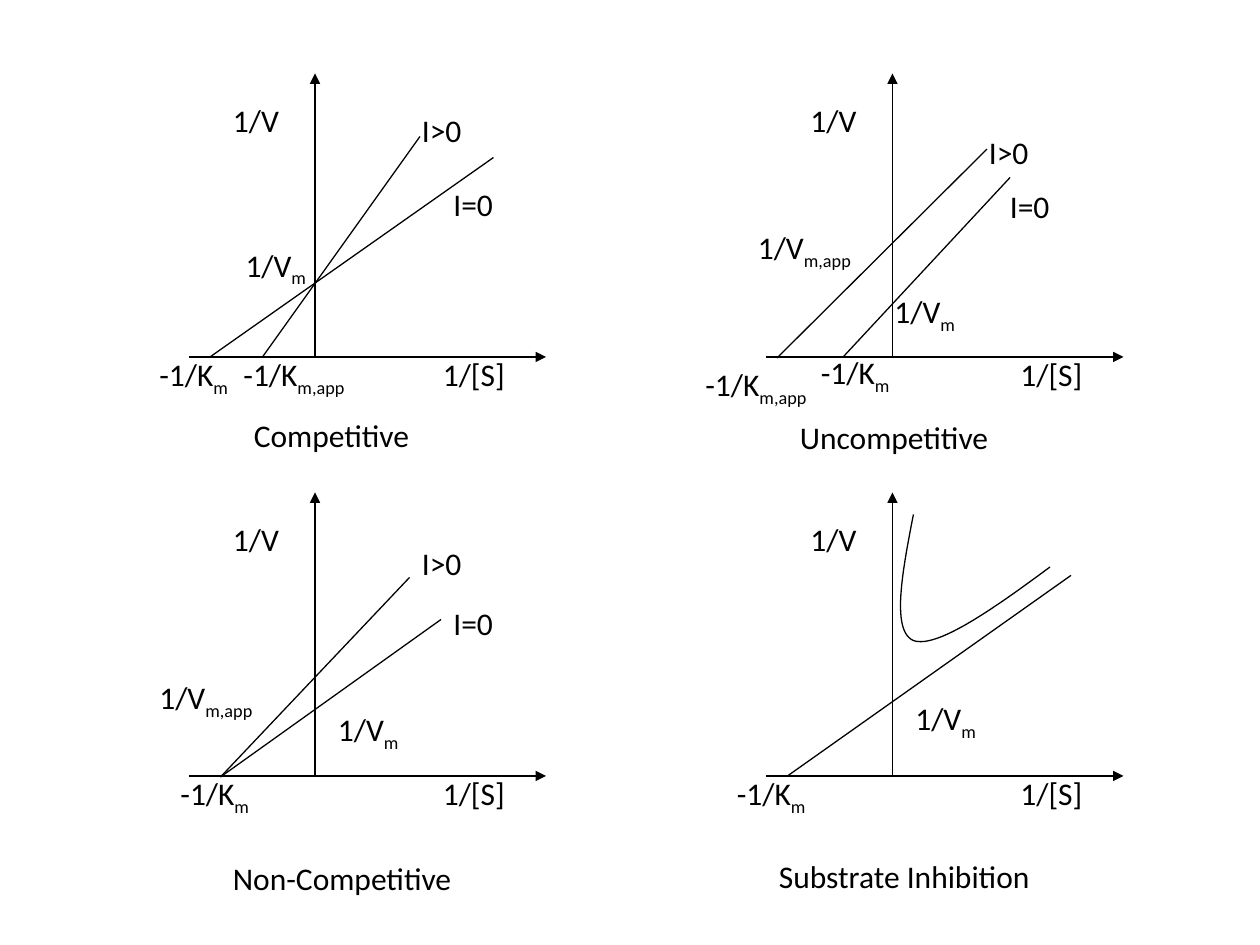
from pptx import Presentation
from pptx.dml.color import RGBColor
from pptx.enum.shapes import MSO_CONNECTOR
from pptx.enum.text import MSO_AUTO_SIZE
from pptx.oxml.ns import qn
from pptx.util import Inches, Pt
from lxml import etree

STRAIGHT = MSO_CONNECTOR.STRAIGHT
GROW = MSO_AUTO_SIZE.SHAPE_TO_FIT_TEXT
COLORS = {"ink": "000000"}
INK = RGBColor.from_string(COLORS["ink"])

deck = Presentation()
deck.slide_width, deck.slide_height = Inches(10), Inches(7.5)
slide = deck.slides.add_slide(deck.slide_layouts[6])
UNIT = deck.slide_width / 120  # grid of 120 columns by 90 rows


def add_line(shapes, zero, ends, arrow=False):
    x, y = zero
    x1, y1, x2, y2 = ends
    line = shapes.add_connector(
        STRAIGHT, *[int(n * UNIT) for n in (x + x1, y + y1, x + x2, y + y2)])
    line.line.color.rgb = INK
    line.line.width = Pt(0.75)
    if arrow:
        etree.SubElement(line.line._get_or_add_ln(), qn("a:tailEnd"), type="triangle")
    etree.SubElement(line._element.spPr, qn("a:effectLst"))


def add_label(shapes, zero, label):
    """Write a label; what follows an underscore is a subscript."""
    words, left, top, wide = label
    box = shapes.add_textbox(
        *[int(n * UNIT) for n in (zero[0] + left, zero[1] + top, wide, 4.8)])
    frame = box.text_frame
    frame.word_wrap = True
    frame.auto_size = GROW
    for i, part in enumerate(words.split("_")):
        run = frame.paragraphs[0].add_run()
        run.text = part
        run.font.name, run.font.size = "Calibri", Pt(18)
        run.font.color.rgb = INK
        if i:
            run._r.get_or_add_rPr().set("baseline", "-25000")


# Each plot is measured from its origin: lines (x1, y1, x2, y2),
# labels and title (words, left, top, width)
PLOTS = [
    {"zero": (30, 34), "title": ("Competitive", -7, 5, 32),
     "lines": [(-10, 0, 17, -19), (-5, 0, 10, -21)],
     "labels": [("I>0", 9, -24, 8), ("I=0", 12, -17, 9),
                ("1/V_m", -7.8, -11.2, 10), ("-1/K_m", -16, -0.8, 12),
                ("-1/K_m,app", -8, -0.8, 18)]},
    {"zero": (85, 34), "title": ("Uncompetitive", -10, 5.2, 32),
     "lines": [(-11, 0.1, 9, -19.8), (-4.7, 0, 11.2, -17.1)],
     "labels": [("I>0", 8, -21.9, 8), ("I=0", 10, -16.8, 9),
                ("1/V_m", -1, -6.8, 10), ("-1/K_m", -8, -1, 12),
                ("-1/K_m,app", -19, 0.2, 18), ("1/V_m,app", -14, -12.9, 16)]},
    {"zero": (30, 73.9), "title": ("Non-Competitive", -9, 7.3, 32),
     "lines": [(-9, 0.1, 9, -18.9), (-9, 0.1, 12, -14.9)],
     "labels": [("I>0", 9, -22.7, 8), ("I=0", 12, -17, 9),
                ("1/V_m", 1, -6.9, 10), ("-1/K_m", -14, -0.8, 12),
                ("1/V_m,app", -16, -9.9, 14)]},
    {"zero": (85, 73.9), "title": ("Substrate Inhibition", -12, 7.1, 30),
     "lines": [(-10, 0, 17, -19.1)],
     "labels": [("1/V_m", 1, -7.9, 10), ("-1/K_m", -16, -0.8, 12)]},
]
AXES = [(0, 0, 0, -27), (-12, 0, 22, 0)]
NAMES = [("1/V", -9, -25, 9), ("1/[S]", 11, -0.8, 10)]

# Plots, one group each
for plot in PLOTS:
    zero = plot["zero"]
    group = slide.shapes.add_group_shape().shapes
    for ends in AXES:
        add_line(group, zero, ends, arrow=True)
    for ends in plot["lines"]:
        add_line(group, zero, ends)
    for label in NAMES + plot["labels"]:
        add_label(group, zero, label)

# Inhibition curve in the last plot: two Bezier spans
SPANS = [[(2, -24.9), (0.9, -19.3), (-0.1, -13.8), (2, -12.9)],
         [(2, -12.9), (4.2, -12.1), (9.6, -15.9), (15, -19.9)]]
STEPS = 30
dots = []
for span in SPANS:
    for i in range(STEPS + 1):
        t = i / STEPS
        parts = ((1 - t) ** 3, 3 * t * (1 - t) ** 2, 3 * t * t * (1 - t), t ** 3)
        dots.append(tuple(
            int(UNIT * (zero[k] + sum(w * p[k] for w, p in zip(parts, span))))
            for k in (0, 1)))
pen = group.build_freeform(*dots[0])
pen.add_line_segments(dots[1:], close=False)
curve = pen.convert_to_shape()
curve.shadow.inherit = False
curve.fill.background()
curve.line.color.rgb = INK
curve.line.width = Pt(0.75)

# Titles under the plots
for plot in PLOTS:
    add_label(slide.shapes, plot["zero"], plot["title"])

deck.save("out.pptx")
